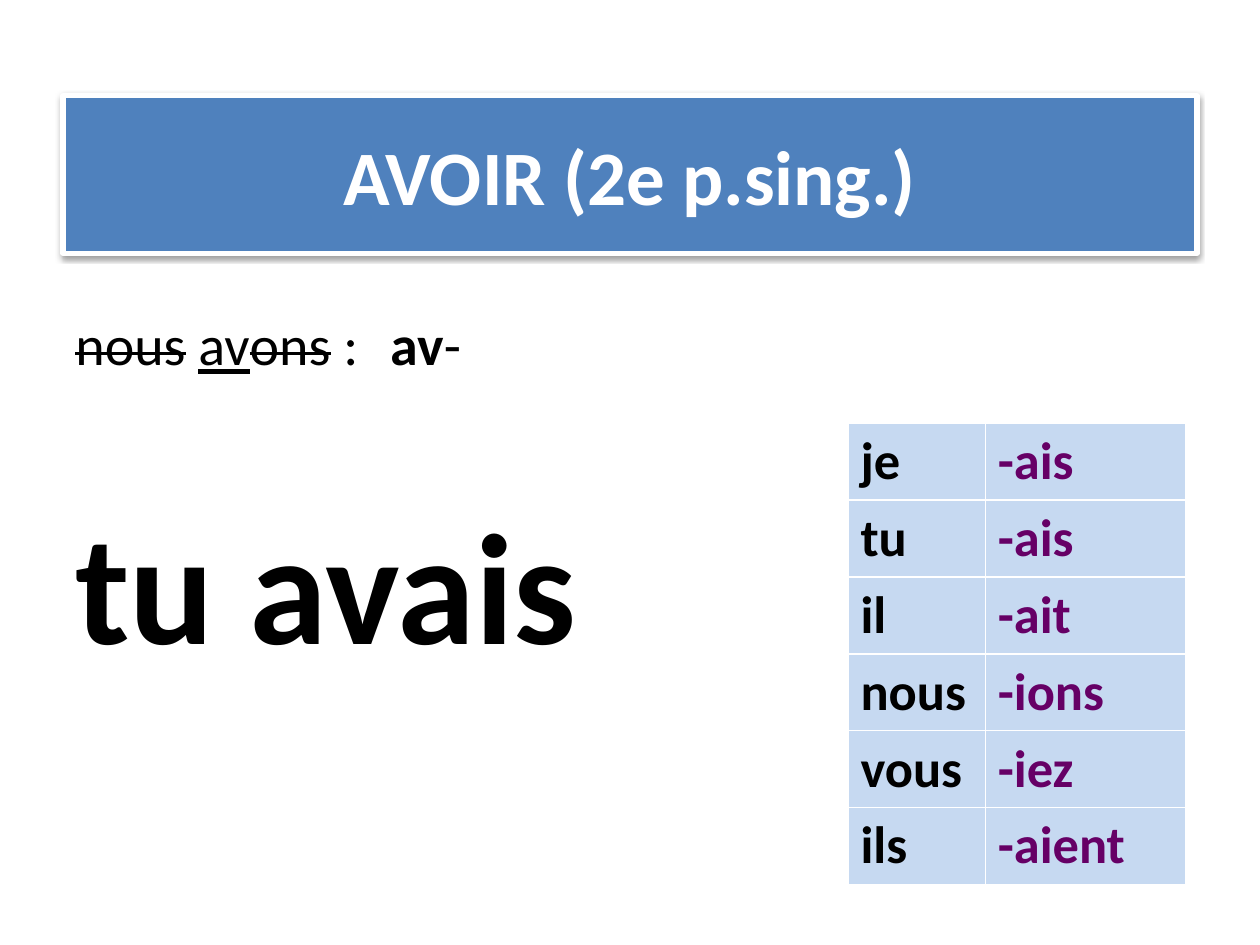
from lxml import etree
from pptx import Presentation
from pptx.dml.color import RGBColor
from pptx.enum import text
from pptx.oxml import parse_xml
from pptx.oxml.ns import nsdecls, qn
from pptx.util import Inches, Pt

FONT = "Calibri"
COLORS = {"banner": "4F81BD", "white": "FFFFFF", "black": "000000",
          "cell": "C6D9F1", "ending": "660066"}

TITLE = "AVOIR (2e p.sing.)"
STEM = [("nous", "strike"), (" ", ""), ("av", "underline"), ("ons", "strike"),
        (" : \t", ""), ("av", "bold"), ("-", "")]
ANSWER = [("tu avais", "bold")]
ENDINGS = [("je", "-ais"), ("tu", "-ais"), ("il", "-ait"),
           ("nous", "-ions"), ("vous", "-iez"), ("ils", "-aient")]
COLUMN_WIDTHS = (1.09, 1.59)
ROW_HEIGHT = 0.61


def rgb(name):
    return RGBColor.from_string(COLORS[name])


def add_run(paragraph, wording, size, color="black", style=""):
    run = paragraph.add_run()
    run.text = wording
    font = run.font
    font.name, font.size = FONT, Pt(size)
    font.color.rgb = rgb(color)
    font.bold = style == "bold"
    font.underline = style == "underline"
    if style == "strike":
        run._r.get_or_add_rPr().set("strike", "sngStrike")


def add_shadow(shape):
    shape._element.spPr.append(parse_xml(
        f'<a:effectLst {nsdecls("a")}><a:outerShdw blurRad="{Pt(3.1)}" '
        f'dist="{Pt(1.6)}" dir="5400000" rotWithShape="0">'
        f'<a:srgbClr val="{COLORS["black"]}"><a:alpha val="38000"/></a:srgbClr>'
        '</a:outerShdw></a:effectLst>'))


def add_borders(cell):
    properties = cell._tc.get_or_add_tcPr()
    for position, side in enumerate(("lnL", "lnR", "lnT", "lnB")):
        border = etree.Element(qn(f"a:{side}"), w=str(Pt(1)))
        fill = etree.SubElement(border, qn("a:solidFill"))
        etree.SubElement(fill, qn("a:srgbClr"), val=COLORS["white"])
        properties.insert(position, border)


def add_title(slide):
    banner = slide.shapes.title
    banner.left, banner.top = Inches(0.5), Inches(0.76)
    banner.width, banner.height = Inches(9), Inches(1.25)
    banner.fill.solid()
    banner.fill.fore_color.rgb = rgb("banner")
    banner.line.color.rgb = rgb("white")
    banner.line.width = Pt(3)
    add_shadow(banner)
    frame = banner.text_frame
    frame.vertical_anchor = text.MSO_ANCHOR.MIDDLE
    heading = frame.paragraphs[0]
    heading.alignment = text.PP_ALIGN.CENTER
    add_run(heading, TITLE, 44, "white", "bold")


def add_conjugation(slide):
    body = slide.shapes.add_textbox(Inches(0.5), Inches(2.41), Inches(9), Inches(4.29))
    frame = body.text_frame
    frame.word_wrap = True
    stem = frame.paragraphs[0]
    answer = frame.add_paragraph()
    answer.space_before = Pt(63)
    for paragraph, runs, size in ((stem, STEM, 32), (answer, ANSWER, 90)):
        for wording, style in runs:
            add_run(paragraph, wording, size, style=style)


def add_endings(slide):
    table = slide.shapes.add_table(
        len(ENDINGS), len(COLUMN_WIDTHS), Inches(6.73), Inches(3.36),
        Inches(sum(COLUMN_WIDTHS)), Inches(ROW_HEIGHT * len(ENDINGS))).table
    table.first_row = table.horz_banding = False
    for column, width in zip(table.columns, COLUMN_WIDTHS):
        column.width = Inches(width)
    for row, entry in enumerate(ENDINGS):
        table.rows[row].height = Inches(ROW_HEIGHT)
        for col, (wording, color) in enumerate(zip(entry, ("black", "ending"))):
            cell = table.cell(row, col)
            cell.fill.solid()
            cell.fill.fore_color.rgb = rgb("cell")
            add_borders(cell)
            add_run(cell.text_frame.paragraphs[0], wording, 30, color, "bold")


def main():
    deck = Presentation()
    deck.slide_width, deck.slide_height = Inches(10), Inches(7.5)
    slide = deck.slides.add_slide(deck.slide_layouts.get_by_name("Title Only"))
    add_title(slide)
    add_conjugation(slide)
    add_endings(slide)
    deck.save("out.pptx")


if __name__ == "__main__":
    main()
